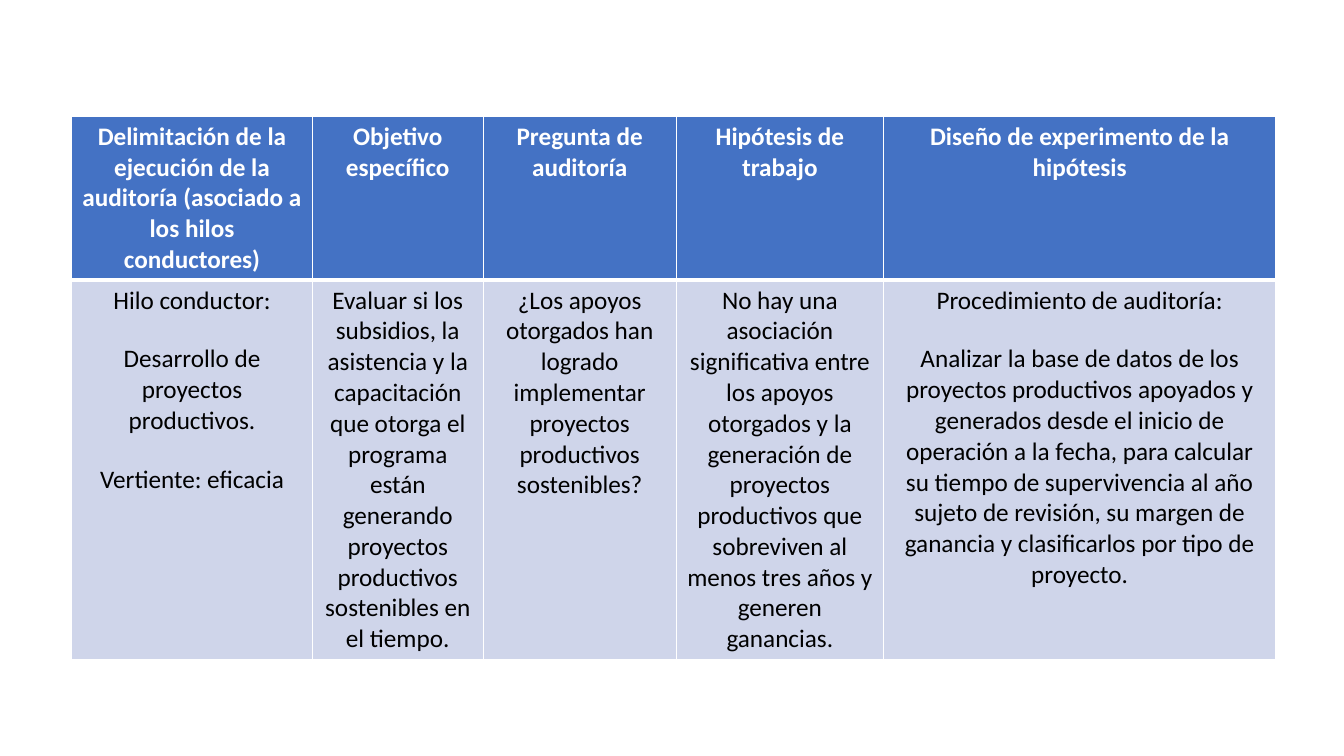
from lxml.etree import SubElement
from pptx import Presentation
from pptx.dml.color import RGBColor
from pptx.enum.text import PP_ALIGN as Align
from pptx.oxml.ns import qn
from pptx.util import Cm, Pt

WHITE, BLACK, BLUE, PALE = "FFFFFF", "000000", "4472C4", "CFD5EA"
COLUMN_WIDTHS = [6.06, 4.31, 4.86, 5.23, 9.88]
ROW_HEIGHTS = [4.1, 9.5]
HEADINGS = [
    ["Delimitación de la ejecución de la auditoría (asociado a los hilos conductores)"],
    ["Objetivo específico"],
    ["Pregunta de auditoría"],
    ["Hipótesis de trabajo"],
    ["Diseño de experimento de la hipótesis"],
]
DETAILS = [
    ["Hilo conductor:", "Desarrollo de proyectos productivos.", "Vertiente: eficacia"],
    ["Evaluar si los subsidios, la asistencia y la capacitación que otorga el programa "
     "están generando proyectos productivos sostenibles en el tiempo."],
    ["¿Los apoyos otorgados han logrado implementar proyectos productivos sostenibles?"],
    ["No hay una asociación significativa entre los apoyos otorgados y la generación de "
     "proyectos productivos que sobreviven al menos tres años y generen ganancias."],
    ["Procedimiento de auditoría:",
     "Analizar la base de datos de los proyectos productivos apoyados y generados desde "
     "el inicio de operación a la fecha, para calcular su tiempo de supervivencia al año "
     "sujeto de revisión, su margen de ganancia y clasificarlos por tipo de proyecto."],
]
HEADING_STYLE = {
    "fill": BLUE, "color": WHITE,
    "font": {"name": "Calibri", "size": Pt(18), "bold": True},
    "borders": {"L": 1, "R": 1, "T": 1, "B": 3},
}
DETAIL_STYLE = {
    "fill": PALE, "color": BLACK,
    "font": {"name": "Calibri", "size": Pt(18), "bold": False},
    "borders": {"L": 1, "R": 1, "T": 3, "B": 1},
}


def paint(target, color):
    target.solid()
    target.fore_color.rgb = RGBColor.from_string(color)


def add_borders(cell, borders):
    properties = cell._tc.get_or_add_tcPr()
    for side, width in borders.items():
        line = SubElement(properties, qn(f"a:ln{side}"), w=str(Pt(width)))
        fill = SubElement(line, qn("a:solidFill"))
        SubElement(fill, qn("a:srgbClr"), val=WHITE)


def fill_cell(cell, texts, style):
    add_borders(cell, style["borders"])
    paint(cell.fill, style["fill"])
    frame = cell.text_frame
    for index, text in enumerate(texts):
        para = frame.add_paragraph() if index else frame.paragraphs[0]
        para.alignment = Align.CENTER
        if index:
            para.space_before = Pt(20)
        span = para.add_run()
        span.text = text
        for name, value in style["font"].items():
            setattr(span.font, name, value)
        paint(span.font.fill, style["color"])


def add_audit_table(page):
    table = page.shapes.add_table(
        len(ROW_HEIGHTS), len(COLUMN_WIDTHS), Cm(1.81), Cm(2.93),
        Cm(sum(COLUMN_WIDTHS)), Cm(sum(ROW_HEIGHTS))).table
    for column, width in zip(table.columns, COLUMN_WIDTHS):
        column.width = Cm(width)
    contents = [(HEADINGS, HEADING_STYLE), (DETAILS, DETAIL_STYLE)]
    for row, height, (entries, style) in zip(table.rows, ROW_HEIGHTS, contents):
        row.height = Cm(height)
        for cell, texts in zip(row.cells, entries):
            fill_cell(cell, texts, style)


def main():
    deck = Presentation()
    deck.slide_width, deck.slide_height = Cm(33.87), Cm(19.05)
    page = deck.slides.add_slide(deck.slide_layouts[6])
    paint(page.background.fill, WHITE)
    add_audit_table(page)
    deck.save("out.pptx")


if __name__ == "__main__":
    main()
